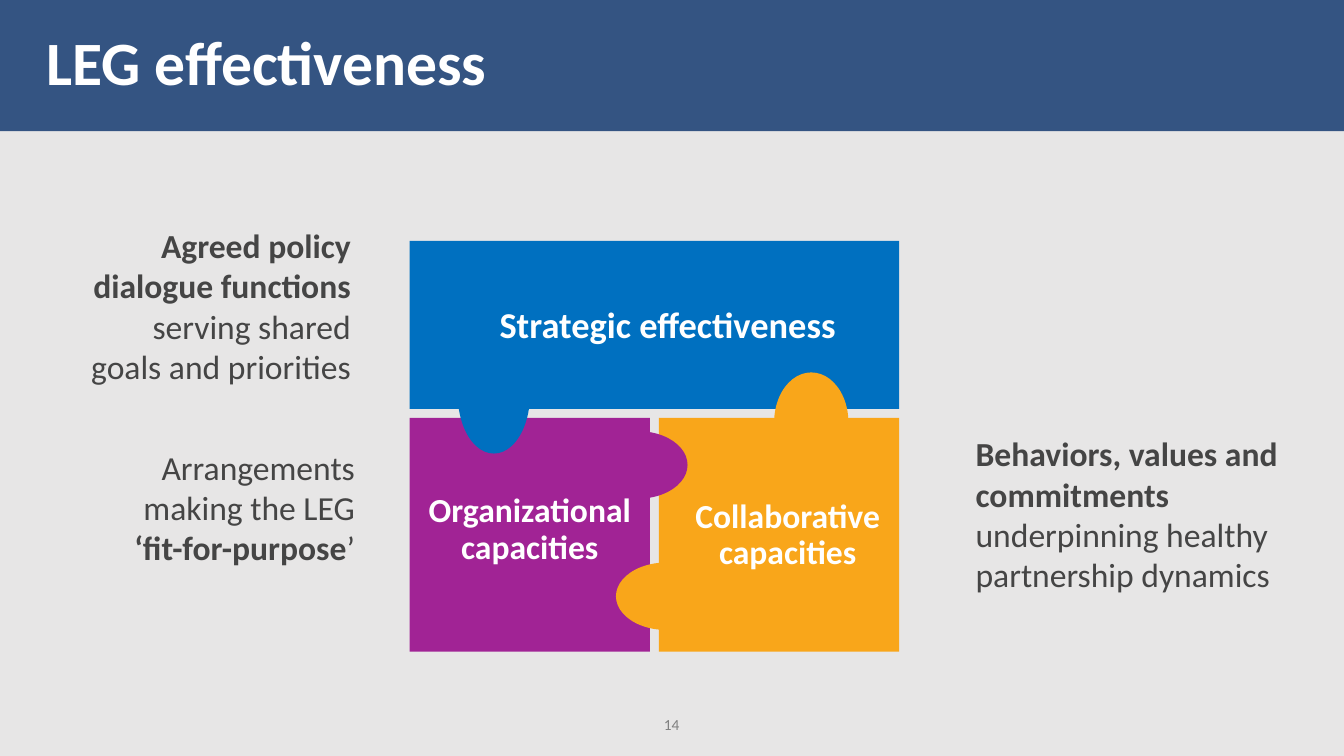
from dataclasses import dataclass
from typing import NamedTuple

from pptx import Presentation
from pptx.dml.color import RGBColor
from pptx.enum.shapes import MSO_SHAPE as Shape
from pptx.enum.text import MSO_ANCHOR as Anchor, PP_ALIGN as Align
from pptx.util import Pt


@dataclass(frozen=True)
class Theme:
    font: str = "Calibri"
    page: str = "E7E6E6"
    banner: str = "345482"
    strategic: str = "0070C0"
    collaborative: str = "F9A61A"
    organizational: str = "A12395"
    light: str = "FFFFFF"
    dark: str = "454545"
    muted: str = "808080"
    title_size: int = 44
    heading_size: int = 26
    body_size: int = 24
    number_size: int = 11


class Box(NamedTuple):
    left: float
    top: float
    width: float
    height: float


class Run(NamedTuple):
    text: str
    bold: bool = False


@dataclass(frozen=True)
class Piece:
    kind: Shape
    box: Box
    color: str


@dataclass(frozen=True)
class Label:
    box: Box
    runs: tuple[Run, ...]
    align: Align = Align.CENTER
    size: int = Theme.body_size
    color: str = Theme.light
    spacing: float = 0.9


T = Theme()

# Puzzle: one wide block above two equal halves, separated by a gap
LEFT, TOP, WIDTH, GAP = 292.6, 172, 349.6, 6.4
UPPER, LOWER = 120, 167
HALF = (WIDTH - GAP) / 2
LOWER_TOP = TOP + UPPER + GAP
RIGHT_HALF = LEFT + HALF + GAP

PIECES = [
    Piece(Shape.RECTANGLE, Box(LEFT, TOP, WIDTH, UPPER), T.strategic),
    Piece(Shape.RECTANGLE, Box(RIGHT_HALF, LOWER_TOP, HALF, LOWER), T.collaborative),
    Piece(Shape.OVAL, Box(553, 266, 53, 71), T.collaborative),
    Piece(Shape.RECTANGLE, Box(LEFT, LOWER_TOP, HALF, LOWER), T.organizational),
    Piece(Shape.OVAL, Box(440, 401.8, 72, 48.2), T.collaborative),
    Piece(Shape.OVAL, Box(327, 240.5, 51.5, 83.5), T.strategic),
    Piece(Shape.OVAL, Box(420.5, 308, 70.6, 48.2), T.organizational),
]

PIECE_LABELS = [
    Label(Box(331.2, 216, 291.6, 35.3), (Run("Strategic effectiveness", True),),
          size=T.heading_size),
    Label(Box(297.4, 349.2, 162, 59.8), (Run("Organizational capacities", True),)),
    Label(Box(483.1, 353.2, 159.1, 59.8), (Run("Collaborative capacities", True),)),
]

NOTES = [
    Label(Box(49.7, 157, 208, 123.8),
          (Run("Agreed policy dialogue functions ", True),
           Run("serving shared goals and priorities")),
          Align.RIGHT, color=T.dark, spacing=1),
    Label(Box(70.6, 315.4, 190, 94.3),
          (Run("Arrangements making the LEG "), Run("‘fit-for-purpose", True), Run("’")),
          Align.RIGHT, color=T.dark, spacing=1),
    Label(Box(689.8, 306, 234.7, 123.8),
          (Run("Behaviors, values and commitments ", True),
           Run("underpinning healthy partnership dynamics")),
          Align.LEFT, color=T.dark, spacing=1),
]

PAGE_NUMBER = Label(Box(460, 507.6, 39.6, 20.9), (Run("14"),),
                    size=T.number_size, color=T.muted, spacing=1)
TITLE = Label(Box(0, 0, 960, 93.6), (Run("LEG effectiveness", True),),
              Align.LEFT, T.title_size)


def points(box: Box) -> list[Pt]:
    return [Pt(v) for v in box]


def paint(fill, color: str) -> None:
    fill.solid()
    fill.fore_color.rgb = RGBColor.from_string(color)


def add_piece(s, piece: Piece) -> None:
    sp = s.shapes.add_shape(piece.kind, *points(piece.box))
    sp.shadow.inherit = False
    sp.line.fill.background()
    paint(sp.fill, piece.color)


def write(tf, label: Label) -> None:
    tf.word_wrap = True
    p = tf.paragraphs[0]
    p.alignment = label.align
    p.line_spacing = label.spacing
    for run in label.runs:
        r = p.add_run()
        r.text = run.text
        formats = {"name": T.font, "size": Pt(label.size), "bold": run.bold}
        for name, value in formats.items():
            setattr(r.font, name, value)
        r.font.color.rgb = RGBColor.from_string(label.color)


def add_label(s, label: Label) -> None:
    write(s.shapes.add_textbox(*points(label.box)).text_frame, label)


def set_title(s) -> None:
    sp = s.shapes.title
    for name, value in zip(Box._fields, points(TITLE.box)):
        setattr(sp, name, value)
    paint(sp.fill, T.banner)
    sp.text_frame.vertical_anchor = Anchor.MIDDLE
    sp.text_frame.margin_left = Pt(33)
    write(sp.text_frame, TITLE)


def main() -> None:
    prs = Presentation()
    prs.slide_width, prs.slide_height = Pt(960), Pt(540)
    s = prs.slides.add_slide(prs.slide_layouts[5])
    paint(s.background.fill, T.page)
    set_title(s)
    for piece in PIECES:
        add_piece(s, piece)
    for label in [*PIECE_LABELS, *NOTES, PAGE_NUMBER]:
        add_label(s, label)
    prs.save("out.pptx")


if __name__ == "__main__":
    main()
